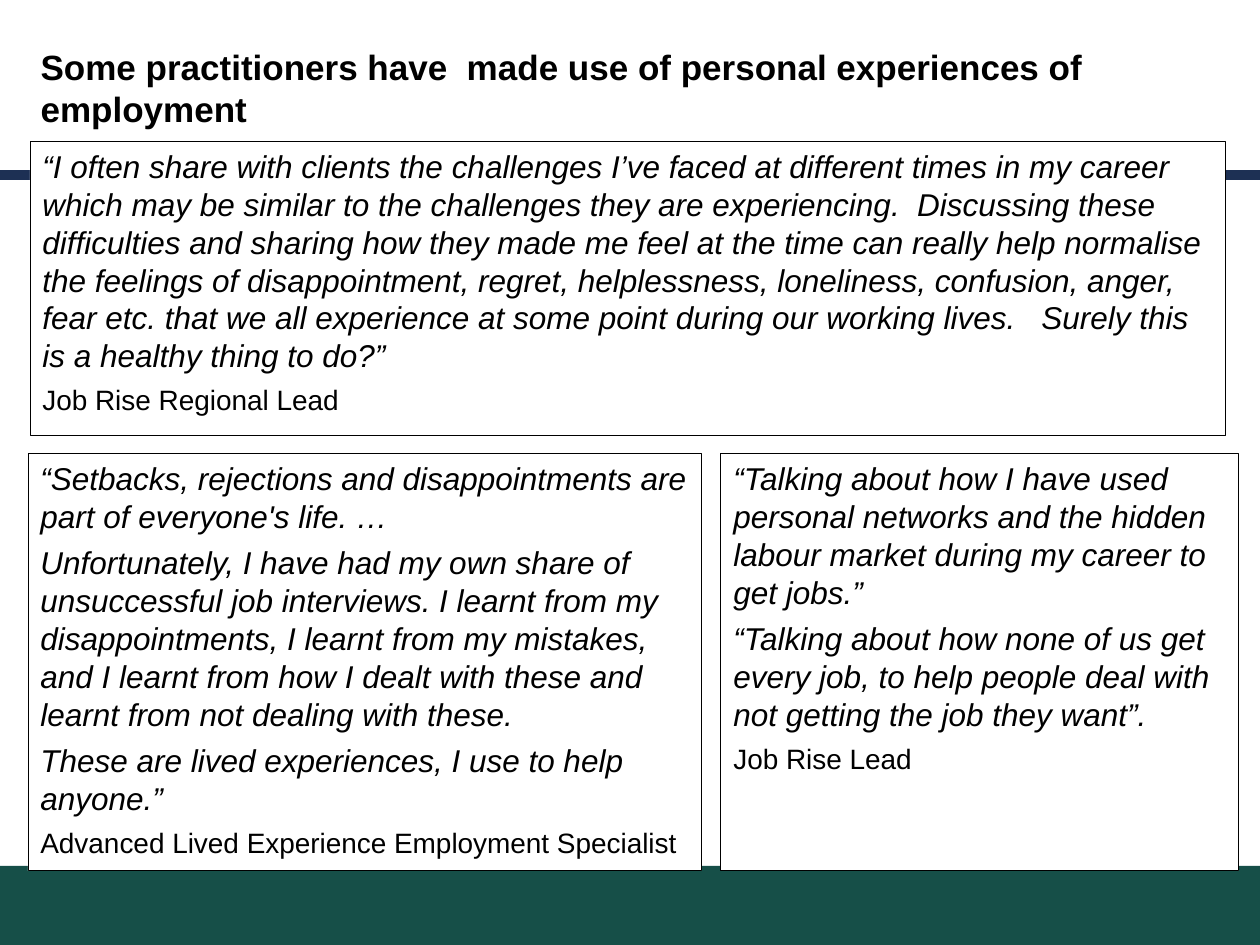
"""Build a slide of practitioner quotes about personal experiences of employment."""
from dataclasses import dataclass

from lxml import etree
from pptx import Presentation
from pptx.dml.color import RGBColor
from pptx.enum.shapes import MSO_CONNECTOR, MSO_SHAPE
from pptx.enum.text import MSO_ANCHOR, MSO_AUTO_SIZE, PP_ALIGN
from pptx.oxml.ns import qn
from pptx.util import Emu, Pt

LEFT = PP_ALIGN.LEFT
TOP = MSO_ANCHOR.TOP
NO_AUTOFIT = MSO_AUTO_SIZE.NONE
RECTANGLE = MSO_SHAPE.RECTANGLE
STRAIGHT = MSO_CONNECTOR.STRAIGHT

BLACK = RGBColor(0x00, 0x00, 0x00)
WHITE = RGBColor(0xFF, 0xFF, 0xFF)
GREEN = RGBColor(0x16, 0x4F, 0x48)
NAVY = RGBColor(0x1D, 0x30, 0x54)

FONT = "Arial"
PIXELS_PER_INCH = 126
SLIDE_WIDTH, SLIDE_HEIGHT = 1260, 945
TITLE_LAYOUT = 5
LOWER_TOP, LOWER_HEIGHT = 453, 418


@dataclass(frozen=True)
class Box:
    left: int
    top: int
    width: int
    height: int


@dataclass(frozen=True)
class QuotePanel:
    box: Box
    quotes: tuple[str, ...]
    speaker: str


TITLE = "Some practitioners have  made use of personal experiences of employment"
TITLE_BOX = Box(28, 39, 1213, 97)
FOOTER_BOX = Box(0, 866, SLIDE_WIDTH, 79)

PANELS = (
    QuotePanel(
        Box(30, 141, 1196, 294),
        (
            "“I often share with clients the challenges I’ve faced at different times in "
            "my career which may be similar to the challenges they are experiencing.  "
            "Discussing these difficulties and sharing how they made me feel at the time "
            "can really help normalise the feelings of disappointment, regret, "
            "helplessness, loneliness, confusion, anger, fear etc. that we all experience "
            "at some point during our working lives.   Surely this is a healthy thing to do?”",
        ),
        "Job Rise Regional Lead",
    ),
    QuotePanel(
        Box(28, LOWER_TOP, 674, LOWER_HEIGHT),
        (
            "“Setbacks, rejections and disappointments are part of everyone's life. …",
            "Unfortunately, I have had my own share of unsuccessful job interviews. I learnt "
            "from my disappointments, I learnt from my mistakes, and I learnt from how I "
            "dealt with these and learnt from not dealing with these.",
            "These are lived experiences, I use to help anyone.”",
        ),
        "Advanced Lived Experience Employment Specialist",
    ),
    QuotePanel(
        Box(721, LOWER_TOP, 518, LOWER_HEIGHT),
        (
            "“Talking about how I have used personal networks and the hidden labour market "
            "during my career to get jobs.”",
            "“Talking about how none of us get every job, to help people deal with not "
            "getting the job they want”.",
        ),
        "Job Rise Lead",
    ),
)


def px(value: int) -> Emu:
    """Convert pixels to EMU."""
    return Emu(round(value * 914400 / PIXELS_PER_INCH))


def write_paragraph(paragraph, text: str, *, size: int, bold=False, italic=False, after=0) -> None:
    """Write left-aligned black text with the given format."""
    paragraph.text = text
    paragraph.alignment = LEFT
    paragraph.space_after = Pt(after)
    font = paragraph.font
    font.name, font.size, font.bold, font.italic = FONT, Pt(size), bold, italic
    font.color.rgb = BLACK


def prepare_frame(frame) -> None:
    """Make a text frame wrap and start at the top."""
    frame.auto_size = NO_AUTOFIT
    frame.word_wrap = True
    frame.vertical_anchor = TOP


def add_rectangle(slide, box: Box, fill: RGBColor):
    """Add a flat rectangle without an outline."""
    shape = slide.shapes.add_shape(
        RECTANGLE, px(box.left), px(box.top), px(box.width), px(box.height)
    )
    shape.shadow.inherit = False
    shape.fill.solid()
    shape.fill.fore_color.rgb = fill
    shape.line.fill.background()
    return shape


def add_rule(slide, start: int, end: int, y: int) -> None:
    """Add the thick horizontal rule."""
    connector = slide.shapes.add_connector(STRAIGHT, px(start), px(y), px(end), px(y))
    connector.line.color.rgb = NAVY
    connector.line.width = Pt(6)
    etree.SubElement(connector._element.spPr, qn("a:effectLst"))


def add_title(slide) -> None:
    """Place and fill the title placeholder."""
    title = slide.shapes.title
    title.left, title.top = px(TITLE_BOX.left), px(TITLE_BOX.top)
    title.width, title.height = px(TITLE_BOX.width), px(TITLE_BOX.height)
    prepare_frame(title.text_frame)
    write_paragraph(title.text_frame.paragraphs[0], TITLE, size=20, bold=True)


def add_panel(slide, panel: QuotePanel) -> None:
    """Add an outlined panel with its quotes and speaker."""
    shape = add_rectangle(slide, panel.box, WHITE)
    shape.line.color.rgb = BLACK
    shape.line.width = Pt(0.5)
    frame = shape.text_frame
    prepare_frame(frame)
    for index, quote in enumerate(panel.quotes):
        paragraph = frame.add_paragraph() if index else frame.paragraphs[0]
        write_paragraph(paragraph, quote, size=18, italic=True, after=5)
    write_paragraph(frame.add_paragraph(), panel.speaker, size=16, after=5)


def main() -> None:
    """Build and save the presentation."""
    presentation = Presentation()
    presentation.slide_width, presentation.slide_height = px(SLIDE_WIDTH), px(SLIDE_HEIGHT)
    slide = presentation.slides.add_slide(presentation.slide_layouts[TITLE_LAYOUT])
    add_rectangle(slide, FOOTER_BOX, GREEN)
    add_rule(slide, -74, 1280, 175)
    add_title(slide)
    for panel in PANELS:
        add_panel(slide, panel)
    presentation.save("out.pptx")


if __name__ == "__main__":
    main()
